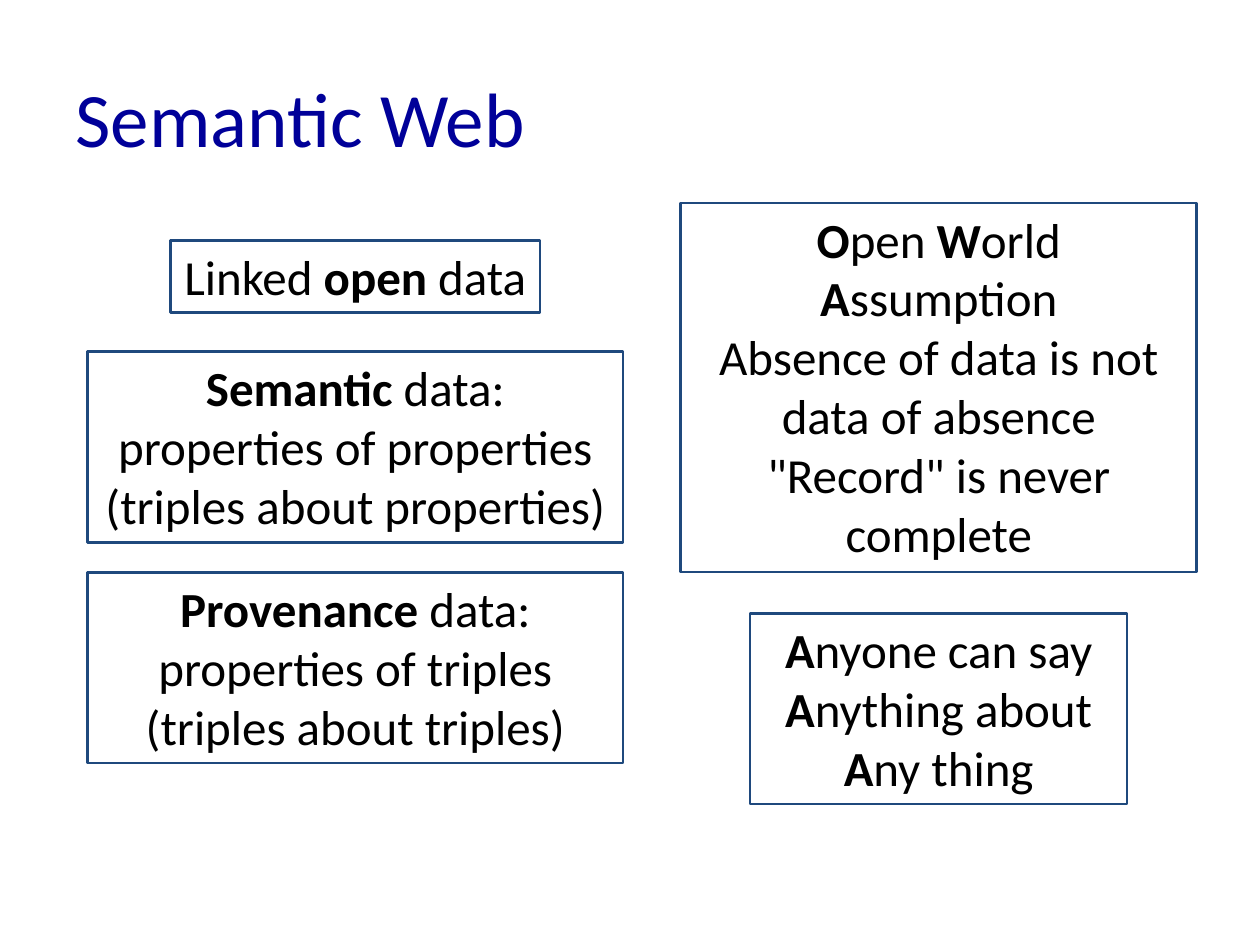
from dataclasses import dataclass

from pptx import Presentation
from pptx import util as u
from pptx.dml.color import RGBColor
from pptx.enum import shapes, text

Pt = u.Pt


@dataclass(frozen=True)
class Theme:
    font: str = "Calibri"
    title_size: int = 44
    body_size: int = 28
    title: RGBColor = RGBColor(0x00, 0x00, 0x99)
    body: RGBColor = RGBColor(0x00, 0x00, 0x00)
    border: RGBColor = RGBColor(0x1F, 0x49, 0x7D)
    border_width: float = 1.5


THEME = Theme()


def add_run(p, content, size, color, bold=False):
    r = p.add_run()
    r.text = content
    r.font.name = THEME.font
    r.font.size = Pt(size)
    r.font.color.rgb = color
    r.font.bold = bold


def set_title(s, content):
    sp = s.shapes.title
    sp.left, sp.top, sp.width, sp.height = Pt(36), Pt(21.6), Pt(648), Pt(90)
    tf = sp.text_frame
    tf.vertical_anchor = text.MSO_ANCHOR.MIDDLE
    p = tf.paragraphs[0]
    p.alignment = text.PP_ALIGN.LEFT
    add_run(p, content, THEME.title_size, THEME.title)


def add_box(s, center, top, width, height, paragraphs, wrap=True):
    """Outlined box; in each paragraph plain and bold pieces alternate."""
    sp = s.shapes.add_shape(shapes.MSO_SHAPE.RECTANGLE, Pt(center - width / 2),
                            Pt(top), Pt(width), Pt(height))
    sp.shadow.inherit = False
    sp.fill.background()
    sp.line.color.rgb = THEME.border
    sp.line.width = Pt(THEME.border_width)
    tf = sp.text_frame
    tf.word_wrap = wrap
    tf.auto_size = text.MSO_AUTO_SIZE.SHAPE_TO_FIT_TEXT
    tf.vertical_anchor = text.MSO_ANCHOR.TOP
    for i, pieces in enumerate(paragraphs):
        p = tf.paragraphs[0] if i == 0 else tf.add_paragraph()
        p.alignment = text.PP_ALIGN.CENTER
        for j, piece in enumerate(pieces):
            if piece:
                add_run(p, piece, THEME.body_size, THEME.body, bold=j % 2 == 1)


def main():
    prs = Presentation()
    prs.slide_width, prs.slide_height = Pt(720), Pt(540)
    s = prs.slides.add_slide(prs.slide_layouts[5])
    set_title(s, "Semantic Web")

    # Left column: kinds of data
    left, wide, three_lines = 203, 306, 109
    add_box(s, left, 137.5, 211, 41, [["Linked ", "open", " data"]], wrap=False)
    add_box(s, left, 201, wide, three_lines, [
        ["", "Semantic", " data: properties of properties"],
        ["(triples about properties)"],
    ])
    add_box(s, left, 327, wide, three_lines, [
        ["", "Provenance", " data: properties of triples"],
        ["(triples about triples)"],
    ])

    # Right column: principles
    right = 536.4
    add_box(s, right, 116, 295, 211, [
        ["", "O", "pen ", "W", "orld ", "A", "ssumption"],
        ["Absence of data is not data of absence"],
        ['"Record" is never complete'],
    ])
    add_box(s, right, 350.5, 215.5, three_lines, [
        ["", "A", "nyone can say ", "A", "nything about ", "A", "ny thing"],
    ])

    prs.save("out.pptx")


if __name__ == "__main__":
    main()
